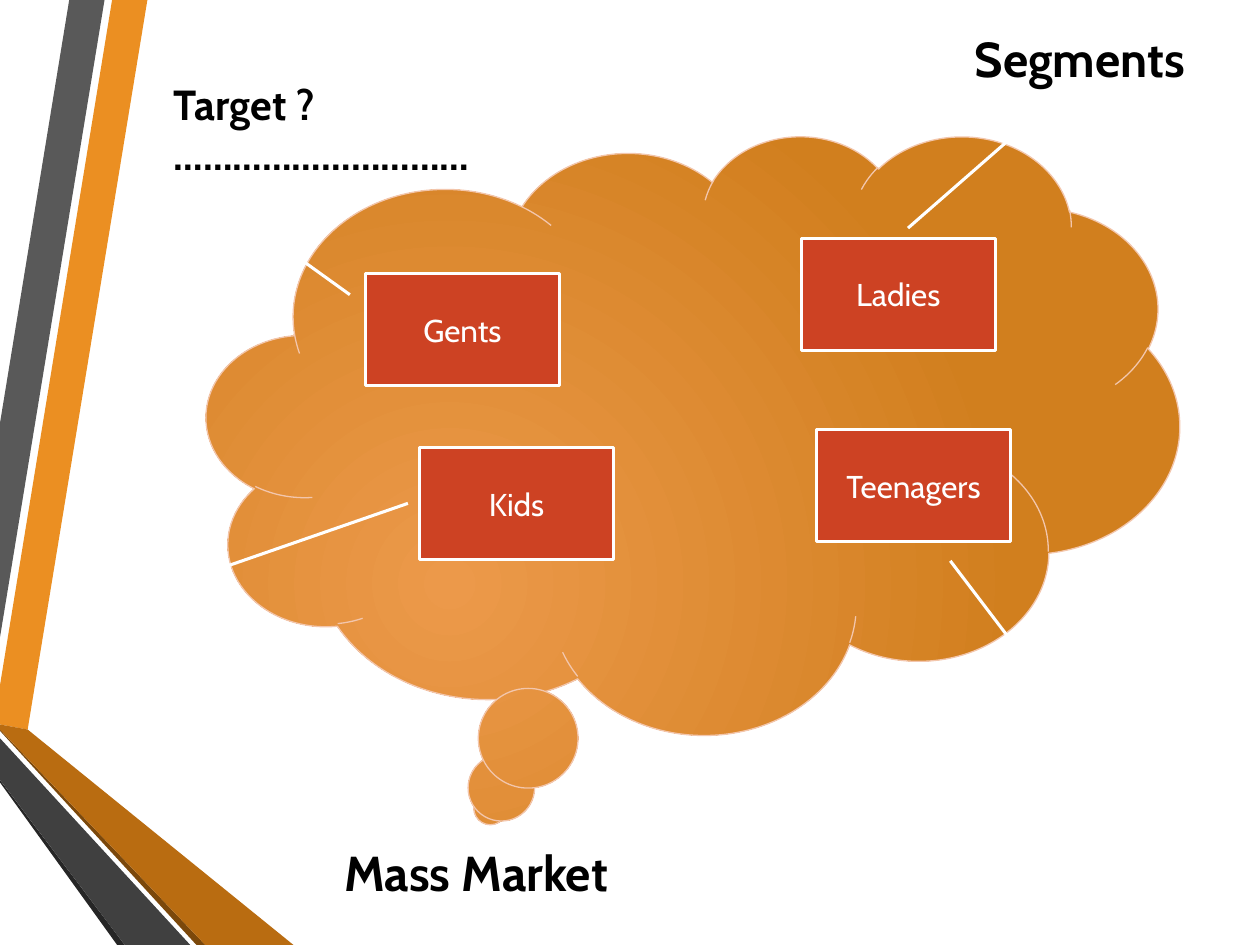
from lxml import etree
from pptx import Presentation
from pptx.dml.color import RGBColor
from pptx.enum import shapes, text
from pptx.oxml import ns
from pptx.util import Inches, Pt

WHITE = RGBColor(0xFF, 0xFF, 0xFF)
BLACK = RGBColor(0, 0, 0)
RED = RGBColor(0xCD, 0x42, 0x23)
GLOW = RGBColor(0xEC, 0x99, 0x4A)
AMBER = RGBColor(0xD1, 0x7F, 0x1E)
PEACH = RGBColor(0xF3, 0xC6, 0xAC)
ORANGE = RGBColor(0xEB, 0x8F, 0x22)
GREY = RGBColor(0x59, 0x59, 0x59)
COAL = RGBColor(0x26, 0x26, 0x26)
BROWN = RGBColor(0x7B, 0x48, 0x0B)
RUST = RGBColor(0xB9, 0x6C, 0x11)
SLATE = RGBColor(0x40, 0x40, 0x40)
FONT = "Cabin"


def write(frame, words, size, color, bold, align):
    frame.word_wrap = True
    frame.text = words
    for para in frame.paragraphs:
        para.alignment = align
        for run in para.runs:
            run.font.name = FONT
            run.font.size = Pt(size)
            run.font.bold = bold
            run.font.color.rgb = color


prs = Presentation()
prs.slide_width, prs.slide_height = Inches(10), Inches(7.5)
slide = prs.slides.add_slide(prs.slide_layouts[6])
items = slide.shapes

# Ribbons along the left edge
ribbons = [
    (ORANGE, [(0, 5.44), (0, 5.75), (0.22, 5.79), (1.17, 0), (0.89, 0)]),
    (GREY, [(0.83, 0), (0.55, 0), (0, 3.36), (0, 5.06)]),
    (COAL, [(0, 6.19), (0, 6.21), (0.93, 7.5), (0.99, 7.5)]),
    (BROWN, [(0, 5.79), (0, 5.8), (1.56, 7.5), (1.63, 7.5)]),
    (RUST, [(0, 5.79), (1.63, 7.5), (2.33, 7.5), (0.22, 5.79), (0, 5.75)]),
    (SLATE, [(0, 6.19), (0.99, 7.5), (1.51, 7.5), (0, 5.86)]),
]
for color, points in ribbons:
    dots = [(Inches(x), Inches(y)) for x, y in points]
    pen = items.build_freeform(*dots[0])
    pen.add_line_segments(dots[1:], close=True)
    band = pen.convert_to_shape()
    band.shadow.inherit = False
    band.fill.solid()
    band.fill.fore_color.rgb = color
    band.line.fill.background()

# Cloud of the whole market, with a round gradient
cloud = items.add_shape(shapes.MSO_SHAPE.CLOUD_CALLOUT, Inches(1.64), Inches(1.07),
                        Inches(7.72), Inches(4.75))
cloud.shadow.inherit = False
cloud.line.color.rgb = PEACH
cloud.line.width = Pt(0.75)
cloud.fill.gradient()
for stop, color, place in zip(cloud.fill.gradient_stops, (GLOW, AMBER), (0, 1)):
    stop.color.rgb = color
    stop.position = place
grad = cloud._element.spPr.find(ns.qn("a:gradFill"))
lin = grad.find(ns.qn("a:lin"))
ring = etree.Element(ns.qn("a:path"), {"path": "circle"})
etree.SubElement(ring, ns.qn("a:fillToRect"),
                 {"l": "50000", "t": "100000", "r": "100000", "b": "50000"})
grad.replace(lin, ring)

# Segments: name, left, top, pointer (start y, x, end y, x)
groups = [
    ("Gents", 2.9, 2.17, (0.19, -0.08, -0.83, -0.9)),
    ("Ladies", 6.36, 1.89, (-0.09, 0.55, -1.33, 1.37)),
    ("Kids", 3.33, 3.55, (0.5, -0.06, 1.28, -1.36)),
    ("Teenagers", 6.48, 3.41, (1.17, 0.69, 2.58, 1.31)),
]
for name, left, top, tail in groups:
    box = items.add_shape(shapes.MSO_SHAPE.LINE_CALLOUT_1, Inches(left), Inches(top),
                          Inches(1.54), Inches(0.89))
    for i, value in enumerate(tail):
        box.adjustments[i] = value
    box.shadow.inherit = False
    box.fill.solid()
    box.fill.fore_color.rgb = RED
    box.line.color.rgb = WHITE
    box.line.width = Pt(1.75)
    box.text_frame.vertical_anchor = text.MSO_ANCHOR.MIDDLE
    write(box.text_frame, name, 18, WHITE, False, text.PP_ALIGN.CENTER)

# Bold labels
labels = [
    ("Mass Market", 2.46, 6.64, 2.64, 0.57, 28, text.PP_ALIGN.CENTER),
    ("Segments", 7.25, 0.18, 2.64, 0.57, 28, text.PP_ALIGN.CENTER),
    ("Target ?\n…………………………", 1.28, 0.57, 4.35, 0.91, 24, text.PP_ALIGN.LEFT),
]
for words, left, top, width, height, size, align in labels:
    label = items.add_textbox(Inches(left), Inches(top), Inches(width), Inches(height))
    label.text_frame.auto_size = text.MSO_AUTO_SIZE.SHAPE_TO_FIT_TEXT
    write(label.text_frame, words, size, BLACK, True, align)

prs.save("out.pptx")
